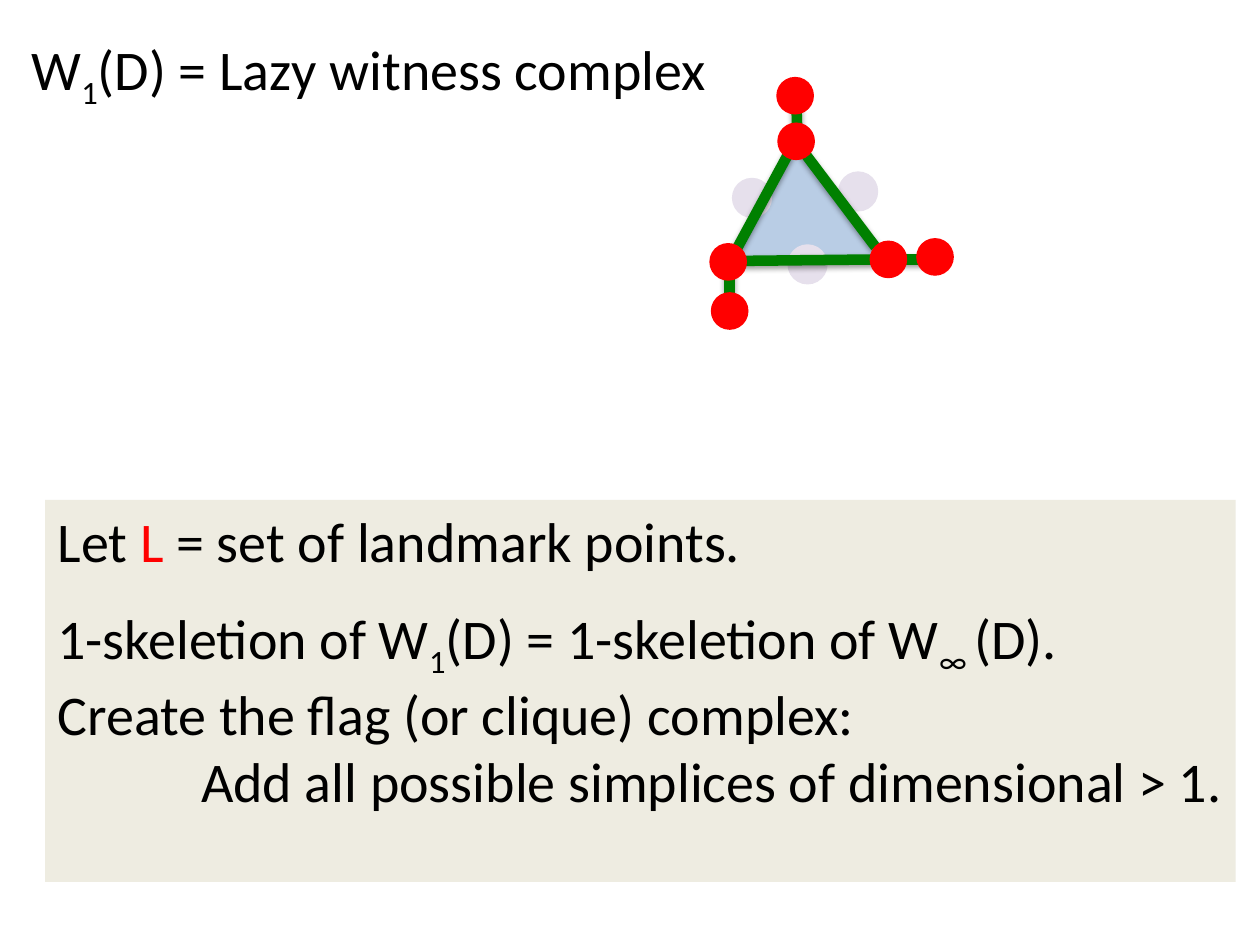
from lxml import etree
from pptx import Presentation
from pptx.dml.color import RGBColor
from pptx.enum.shapes import MSO_CONNECTOR, MSO_SHAPE
from pptx.enum.text import MSO_ANCHOR, PP_ALIGN
from pptx.oxml import parse_xml
from pptx.util import Cm, Pt

LEFT, RIGHT = PP_ALIGN.LEFT, PP_ALIGN.RIGHT
TOP = MSO_ANCHOR.TOP
STRAIGHT = MSO_CONNECTOR.STRAIGHT
RECTANGLE, OVAL = MSO_SHAPE.RECTANGLE, MSO_SHAPE.OVAL
TRIANGLE = MSO_SHAPE.ISOSCELES_TRIANGLE

BLACK, RED, GREEN = "000000", "FF0000", "008000"
PANEL_FILL, FACE_FILL, WITNESS_FILL = "EEECE1", "B9CDE5", "E6E0EC"
SUBSCRIPT = "-25000"
SHADOW = (
    '<a:effectLst xmlns:a="http://schemas.openxmlformats.org/drawingml/2006/main">'
    '<a:outerShdw blurRad="40000" dist="20000" dir="5400000" rotWithShape="0">'
    '<a:srgbClr val="000000"><a:alpha val="38000"/></a:srgbClr>'
    "</a:outerShdw></a:effectLst>"
)

LANDMARK_SIZE, WITNESS_SIZE = 0.76, 0.81
LANDMARKS = [(0.38, 3.73), (3.61, 3.68), (1.75, 1.3),
             (4.55, 3.63), (1.73, 0.38), (0.41, 4.72)]
WITNESSES = [(1.98, 3.78), (3, 2.31), (0.86, 2.44)]
EDGES = [
    ((0.41, 4.57), (0.41, 3.63)),
    ((1.78, 1.35), (1.75, 0.41)),
    ((4.57, 3.68), (3.63, 3.68)),
    ((3.38, 3.68), (0.56, 3.71)),
    ((3.35, 3.43), (1.78, 1.35)),
    ((1.7, 1.35), (0.41, 3.73)),
]

HEADING = [("W", ""), ("1", "sub"), ("(D) = Lazy witness complex", "")]
STEPS = [
    [("Let ", ""), ("L", "red"), (" = set of landmark points.", "")],
    [("1-skeletion of W", ""), ("1", "sub"), ("(D) = 1-skeletion of W", ""),
     ("∞ ", "sub"), ("(D).", "")],
    [("Create the flag (or clique) complex:", "")],
    [("Add all possible simplices of dimensional > 1.", "")],
]


def color(value):
    """Return the colour for a hex string."""
    return RGBColor.from_string(value)


def write_runs(paragraph, parts, alignment=LEFT):
    """Fill a paragraph with plain, red and subscript runs."""
    paragraph.alignment = alignment
    for words, role in parts:
        run = paragraph.add_run()
        run.text = words
        run.font.name = "Calibri"
        run.font.size = Pt(32)
        run.font.color.rgb = color(RED if role == "red" else BLACK)
        if role == "sub":
            run.font._element.set("baseline", SUBSCRIPT)


def add_filled(slide, preset, left, top, width, height, fill):
    """Add a flat shape without outline, measured in centimetres."""
    shape = slide.shapes.add_shape(preset, Cm(left), Cm(top), Cm(width), Cm(height))
    shape.shadow.inherit = False
    shape.fill.solid()
    shape.fill.fore_color.rgb = color(fill)
    shape.line.fill.background()
    return shape


def add_dots(slide, left, top, centres, size, fill):
    """Add circles around centres given relative to a corner."""
    for x, y in centres:
        add_filled(slide, OVAL, left + x - size / 2, top + y - size / 2,
                   size, size, fill)


def add_edge(slide, left, top, start, end):
    """Add a shadowed edge between two points relative to a corner."""
    edge = slide.shapes.add_connector(
        STRAIGHT, Cm(left + start[0]), Cm(top + start[1]),
        Cm(left + end[0]), Cm(top + end[1]))
    edge.line.color.rgb = color(GREEN)
    edge.line.width = Pt(6)
    edge._element.spPr.append(parse_xml(etree.tostring(etree.fromstring(SHADOW))))


def add_heading(slide, left, top, width, height):
    """Place and write the slide title."""
    title = slide.shapes.title
    title.left, title.top = Cm(left), Cm(top)
    title.width, title.height = Cm(width), Cm(height)
    frame = title.text_frame
    frame.word_wrap = False
    frame.vertical_anchor = TOP
    write_runs(frame.paragraphs[0], HEADING)


def add_steps(slide, left, top, width, height):
    """Add the panel that explains the construction."""
    panel = add_filled(slide, RECTANGLE, left, top, width, height, PANEL_FILL)
    frame = panel.text_frame
    frame.word_wrap = True
    frame.vertical_anchor = TOP
    for index, parts in enumerate(STEPS):
        paragraph = frame.add_paragraph() if index else frame.paragraphs[0]
        write_runs(paragraph, parts, RIGHT if index == len(STEPS) - 1 else LEFT)
    frame.paragraphs[0].space_after = Pt(17)


def add_complex(slide, left, top):
    """Draw the witness complex from its top left corner."""
    face = add_filled(slide, TRIANGLE, left + 0.41, top + 1.3, 3, 2.39, FACE_FILL)
    face.adjustments[0] = 0.46
    add_dots(slide, left, top, WITNESSES, WITNESS_SIZE, WITNESS_FILL)
    for start, end in EDGES:
        add_edge(slide, left, top, start, end)
    add_dots(slide, left, top, LANDMARKS, LANDMARK_SIZE, RED)


def main():
    """Build and save the slide."""
    deck = Presentation()
    deck.slide_width, deck.slide_height = Cm(25.4), Cm(19.05)
    slide = deck.slides.add_slide(deck.slide_layouts[5])
    add_heading(slide, 0.38, 0.56, 14.45, 1.62)
    add_steps(slide, 0.91, 10.08, 24, 7.7)
    add_complex(slide, 14.3, 1.55)
    deck.save("out.pptx")


if __name__ == "__main__":
    main()
